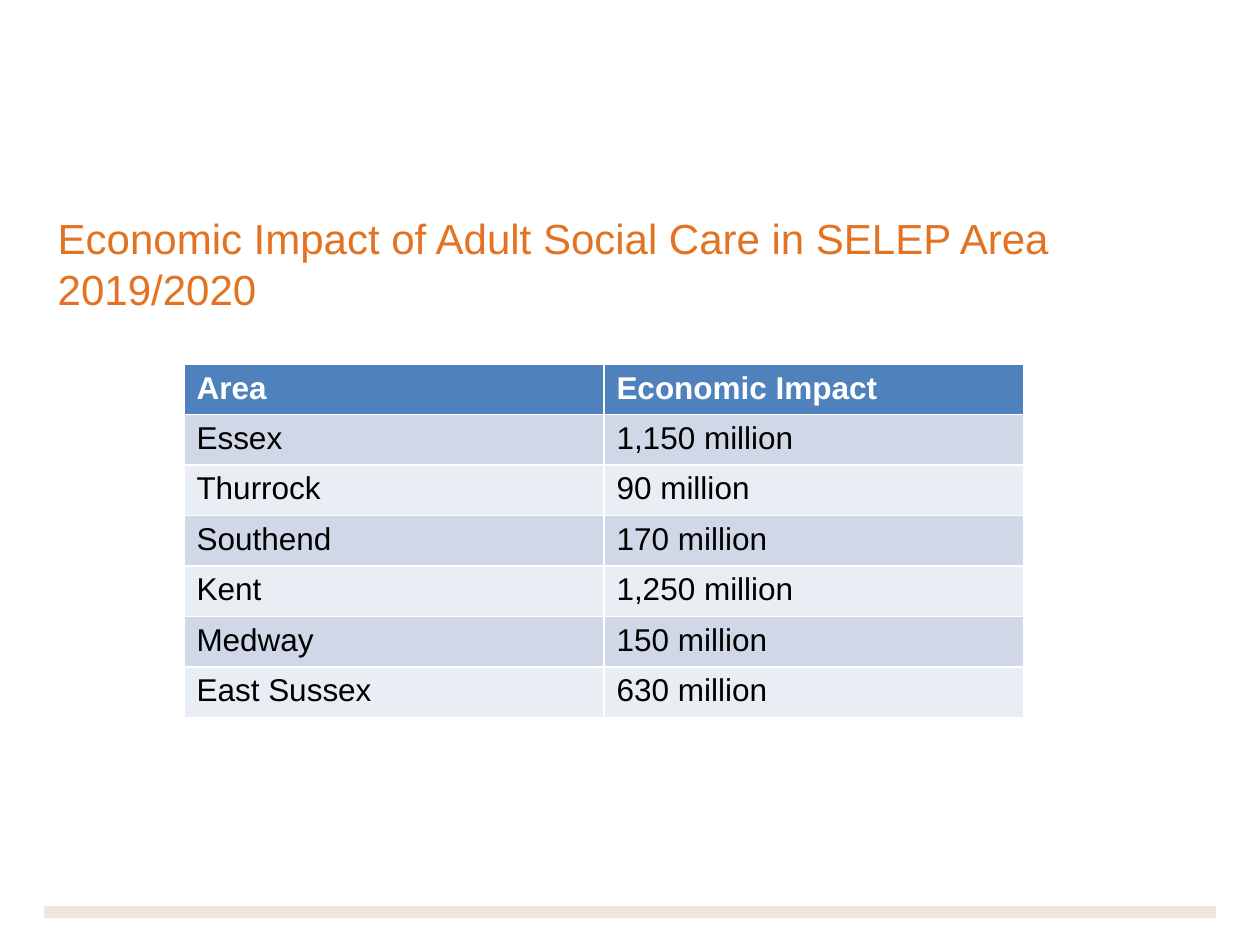
"""Build the slide on the economic impact of adult social care in the SELEP area."""
from lxml import etree
from pptx import Presentation
from pptx import util as u
from pptx.dml.color import RGBColor
from pptx.enum import shapes, text
from pptx.oxml.ns import qn

ORANGE = RGBColor(0xE3, 0x72, 0x22)
TAUPE = RGBColor(0xBA, 0x9F, 0x88)
BLUE = RGBColor(0x4F, 0x81, 0xBD)
BANDS = (RGBColor(0xE9, 0xED, 0xF4), RGBColor(0xD0, 0xD8, 0xE8))
WHITE = RGBColor(0xFF, 0xFF, 0xFF)
BLACK = RGBColor(0, 0, 0)

WIDTH, HEIGHT = u.Inches(10), u.Inches(7.5)
ROW_HEIGHT = u.Inches(0.4)
COLUMN_WIDTH = WIDTH // 3

TITLE = "Economic Impact of Adult Social Care in SELEP Area 2019/2020"
IMPACTS = (
    ("Area", "Economic Impact"),
    ("Essex", "1,150 million"),
    ("Thurrock", "90 million"),
    ("Southend", "170 million"),
    ("Kent", "1,250 million"),
    ("Medway", "150 million"),
    ("East Sussex", "630 million"),
)


def write(frame, wording, color, **formats):
    """Put one Arial paragraph into a text frame."""
    paragraph = frame.paragraphs[0]
    run = paragraph.add_run()
    run.text = wording
    run.font.color.rgb = color
    for name, value in {"name": "Arial", **formats}.items():
        setattr(run.font, name, value)


def add_footer_rule(slide):
    """Draw the pale rule across the foot of the slide."""
    margin, level = u.Inches(0.35), u.Inches(7.24)
    rule = slide.shapes.add_connector(
        shapes.MSO_CONNECTOR.STRAIGHT, margin, level, WIDTH - margin, level)
    rule.line.width = u.Pt(7)
    rule.line.color.rgb = TAUPE
    properties = rule.line._get_or_add_ln().getparent()
    tint = properties.find(".//" + qn("a:srgbClr"))
    etree.SubElement(tint, qn("a:alpha"), val="25000")
    etree.SubElement(properties, qn("a:effectLst"))


def add_title(slide):
    """Place the orange heading."""
    heading = slide.shapes.add_textbox(
        u.Inches(0.36), u.Inches(1.64), u.Inches(9.39), u.Inches(3.06))
    frame = heading.text_frame
    for name, value in {"word_wrap": True,
                        "vertical_anchor": text.MSO_ANCHOR.TOP}.items():
        setattr(frame, name, value)
    write(frame, TITLE, ORANGE, size=u.Pt(24))


def add_impact_table(slide):
    """Tabulate the impact by area under a blue header, in two bands."""
    rows, columns = len(IMPACTS), len(IMPACTS[0])
    table = slide.shapes.add_table(
        rows, columns, u.Inches(1.46), u.Inches(2.89),
        columns * COLUMN_WIDTH, rows * ROW_HEIGHT).table
    for row, entries in enumerate(IMPACTS):
        header = row == 0
        for column, entry in enumerate(entries):
            cell = table.cell(row, column)
            cell.fill.solid()
            cell.fill.fore_color.rgb = BLUE if header else BANDS[row % 2]
            write(cell.text_frame, entry, WHITE if header else BLACK,
                  size=u.Pt(18), bold=header)


def main():
    """Assemble and save the slide."""
    deck = Presentation()
    deck.slide_width, deck.slide_height = WIDTH, HEIGHT
    slide = deck.slides.add_slide(deck.slide_layouts[6])
    add_footer_rule(slide)
    add_title(slide)
    add_impact_table(slide)
    deck.save("out.pptx")


if __name__ == "__main__":
    main()
